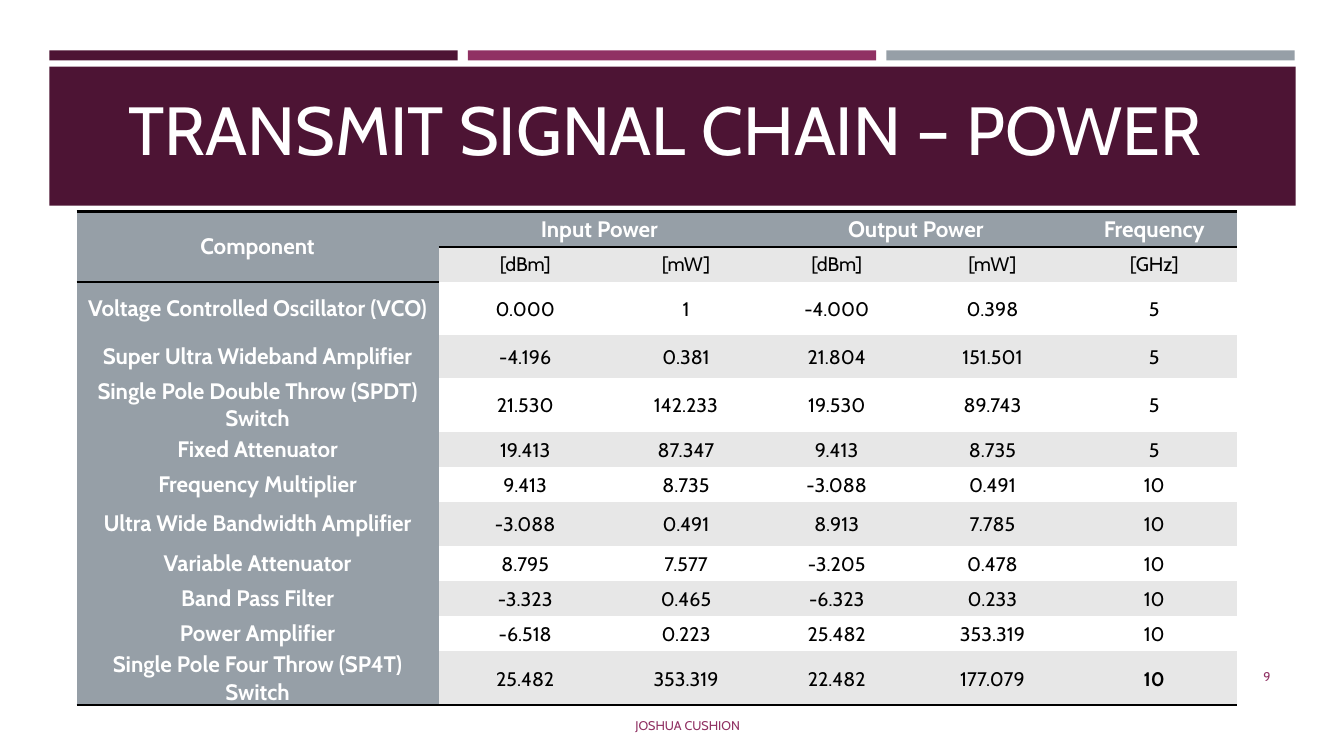
from lxml import etree
from pptx import Presentation
from pptx.dml.color import RGBColor
from pptx.enum import shapes, text
from pptx.oxml import ns
from pptx.util import Inches, Pt

# Content
TITLE = "TRANSMIT SIGNAL CHAIN – POWER "
AUTHOR = "JOSHUA CUSHION"
PAGE = "9"
ROWS = [
    ("Component", "Input Power", "", "Output Power", "", "Frequency"),
    ("", "[dBm]", "[mW]", "[dBm]", "[mW]", "[GHz]"),
    ("Voltage Controlled Oscillator (VCO)", "0.000", "1", "-4.000", "0.398", "5"),
    ("Super Ultra Wideband Amplifier", "-4.196", "0.381", "21.804", "151.501", "5"),
    ("Single Pole Double Throw (SPDT) Switch", "21.530", "142.233", "19.530", "89.743", "5"),
    ("Fixed Attenuator", "19.413", "87.347", "9.413", "8.735", "5"),
    ("Frequency Multiplier", "9.413", "8.735", "-3.088", "0.491", "10"),
    ("Ultra Wide Bandwidth Amplifier", "-3.088", "0.491", "8.913", "7.785", "10"),
    ("Variable Attenuator", "8.795", "7.577", "-3.205", "0.478", "10"),
    ("Band Pass Filter", "-3.323", "0.465", "-6.323", "0.233", "10"),
    ("Power Amplifier", "-6.518", "0.223", "25.482", "353.319", "10"),
    ("Single Pole Four Throw (SP4T) Switch", "25.482", "353.319", "22.482", "177.079", "10"),
]
MERGES = [((0, 0), (1, 0)), ((0, 1), (0, 2)), ((0, 3), (0, 4))]
COLUMN_WIDTHS = [3.59, 1.72, 1.47, 1.52, 1.57, 1.64]
ROW_HEIGHTS = [0.35, 0.35, 0.52, 0.43, 0.53, 0.35, 0.35, 0.43, 0.35, 0.35, 0.35, 0.53]
COLORS = {"plum": "4D1434", "berry": "903163", "gray": "969FA7",
          "band": "E7E7E7", "white": "FFFFFF", "black": "000000"}
FONT = "Cabin"
NO_STYLE = "{2D5ABB26-0587-4C30-8999-92F81FD0307C}"
CENTER, RIGHT = text.PP_ALIGN.CENTER, text.PP_ALIGN.RIGHT
MIDDLE, BOTTOM = text.MSO_ANCHOR.MIDDLE, text.MSO_ANCHOR.BOTTOM


def rgb(name):
    return RGBColor.from_string(COLORS[name])


def write(frame, words, size, color, align=CENTER, bold=False, spacing=None):
    paragraph = frame.paragraphs[0]
    paragraph.alignment = align
    paragraph.line_spacing = spacing
    run = paragraph.add_run()
    run.text = words
    for name, value in {"name": FONT, "size": Pt(size), "bold": bold}.items():
        setattr(run.font, name, value)
    run.font.color.rgb = rgb(color)


def add_bar(slide, left, top, width, height, color):
    bar = slide.shapes.add_shape(shapes.MSO_SHAPE.RECTANGLE, *map(Inches, (left, top, width, height)))
    bar.shadow.inherit = False
    bar.fill.solid()
    bar.fill.fore_color.rgb = rgb(color)
    bar.line.fill.background()


def add_text(slide, box, anchor, *style):
    frame = slide.shapes.add_textbox(*map(Inches, box)).text_frame
    frame.word_wrap = True
    frame.vertical_anchor = anchor
    write(frame, *style)


def add_borders(cell, sides):
    properties = cell._tc.get_or_add_tcPr()
    for index, side in enumerate(sides):
        line = etree.Element(ns.qn(f"a:ln{side}"), w=str(Pt(2)))
        fill = etree.SubElement(line, ns.qn("a:solidFill"))
        etree.SubElement(fill, ns.qn("a:srgbClr"), val=COLORS["black"])
        properties.insert(index, line)


def border_sides(row, column):
    if row == 0:
        return "TB"
    return "B" if row == len(ROWS) - 1 or (row, column) == (1, 0) else ""


def add_power_table(slide):
    frame = slide.shapes.add_table(len(ROWS), len(COLUMN_WIDTHS), Inches(0.76), Inches(2.1),
                                   Inches(sum(COLUMN_WIDTHS)), Inches(sum(ROW_HEIGHTS)))
    table = frame.table
    frame.element.xpath(".//a:tableStyleId")[0].text = NO_STYLE
    table.first_row = table.horz_banding = False
    for column, width in zip(table.columns, COLUMN_WIDTHS):
        column.width = Inches(width)
    for row, height in zip(table.rows, ROW_HEIGHTS):
        row.height = Inches(height)
    for first, last in MERGES:
        table.cell(*first).merge(table.cell(*last))

    cell_format = {"margin_left": Inches(0.07), "margin_right": Inches(0.07),
                   "margin_top": 0, "margin_bottom": 0, "vertical_anchor": MIDDLE}
    for r, values in enumerate(ROWS):
        for c, value in enumerate(values):
            cell = table.cell(r, c)
            for name, setting in cell_format.items():
                setattr(cell, name, setting)
            heading = r == 0 or c == 0
            cell.fill.solid()
            cell.fill.fore_color.rgb = rgb("gray" if heading else "band" if r % 2 else "white")
            add_borders(cell, border_sides(r, c))
            if not value:
                continue
            if heading:
                write(cell.text_frame, value, 16, "white", bold=True)
            else:
                last_cell = r == len(ROWS) - 1 and c == len(values) - 1
                write(cell.text_frame, value, 14, "black", bold=last_cell,
                      spacing=1.07 if r > 1 else None)


def main():
    presentation = Presentation()
    presentation.slide_width, presentation.slide_height = Inches(13.33), Inches(7.5)
    slide = presentation.slides.add_slide(presentation.slide_layouts[6])

    # Accent bars and title band
    for index, color in enumerate(("plum", "berry", "gray")):
        add_bar(slide, 0.49 + 4.15 * index, 0.5, 4.05, 0.1, color)
    add_bar(slide, 0.49, 0.66, 12.36, 1.38, "plum")
    add_text(slide, (0.64, 0.65, 12.06, 1.08), BOTTOM, TITLE, 48.6, "white")

    add_power_table(slide)

    # Footer
    add_text(slide, (3.04, 7, 7.56, 0.4), MIDDLE, AUTHOR, 9, "berry")
    add_text(slide, (11.55, 6.51, 1.15, 0.4), MIDDLE, PAGE, 9, "berry", RIGHT)

    presentation.save("out.pptx")


if __name__ == "__main__":
    main()
